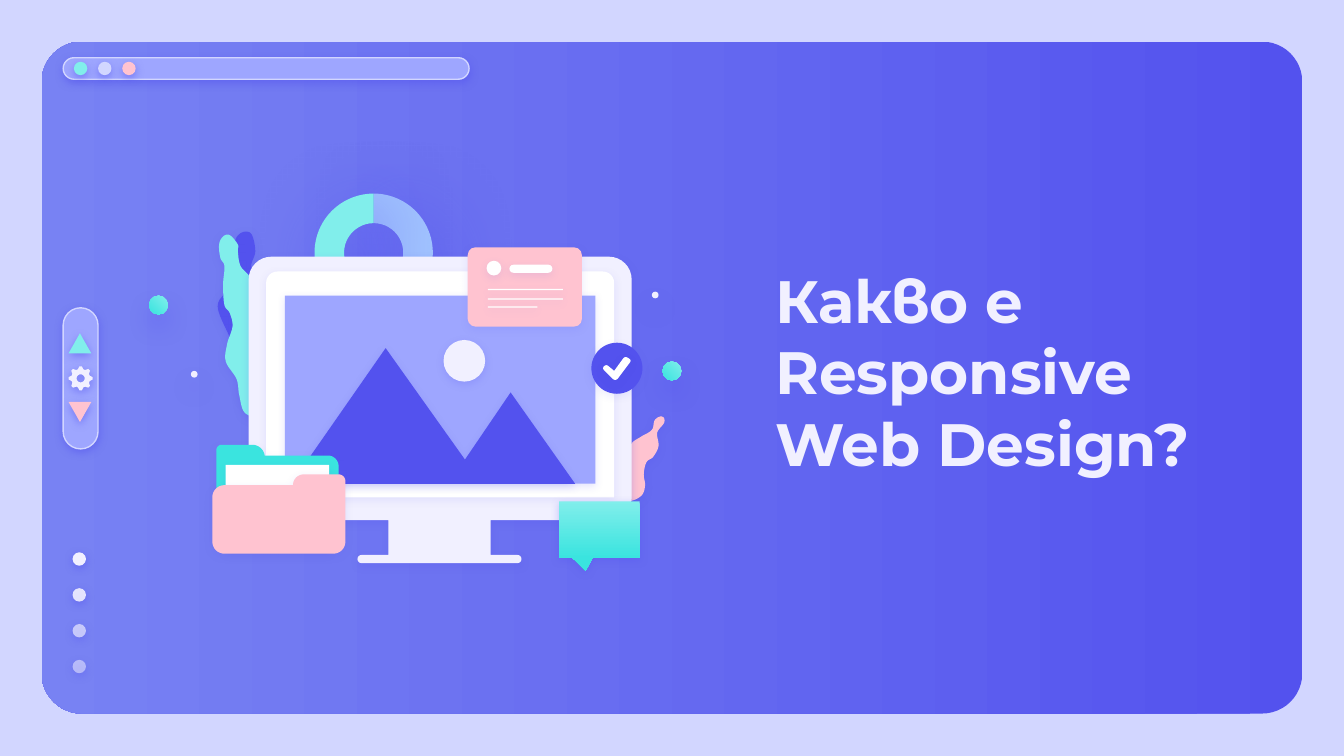
from dataclasses import dataclass
from math import cos, hypot, pi, sin

from lxml.etree import SubElement
from pptx import Presentation
from pptx.dml.color import RGBColor
from pptx.enum.lang import MSO_LANGUAGE_ID
from pptx.enum.shapes import MSO_SHAPE
from pptx.enum.text import MSO_ANCHOR
from pptx.oxml.ns import qn
from pptx.util import Inches, Pt


@dataclass(frozen=True)
class Theme:
    page: str = "D2D6FF"
    indigo: str = "5352EE"
    lilac: str = "9EA6FF"
    sky: str = "A1C3FF"
    mint: str = "81EEEB"
    teal: str = "3AE4DF"
    pink: str = "FFC3D0"
    pale: str = "F1F0FF"
    white: str = "FFFFFF"
    panel: tuple = ("5352EE", "7882F3", 180)
    bubble: tuple = ("81EEEB", "3AE4DF", 270)
    dot: tuple = ("81EEEB", "3AE4DF", 225)
    font: str = "Montserrat"
    title_size: int = 32


@dataclass(frozen=True)
class Box:
    left: float
    top: float
    width: float
    height: float


THEME = Theme()
# Shadows: opacity %, blur pt, distance pt, direction in degrees
SOFT = (50, 4.5, 1.5, 90)
FLOATING = (38, 12.4, 6.8, 90)
WIDE = (67, 38.2, 9, 49)


def faint(opacity):
    return (opacity, *SOFT[1:])


def style(shape, fill, shadow=None, line=None, opacity=100):
    if isinstance(fill, tuple):
        shape.fill.gradient()
        shape.fill.gradient_angle = fill[2]
        for stop, colour in zip(shape.fill.gradient_stops, fill):
            stop.color.rgb = RGBColor.from_string(colour)
    else:
        shape.fill.solid()
        shape.fill.fore_color.rgb = RGBColor.from_string(fill)
    if opacity < 100:
        colour = shape.element.spPr.find(qn("a:solidFill"))[0]
        SubElement(colour, qn("a:alpha"), val=str(opacity * 1000))
    if line:
        shape.line.color.rgb = RGBColor.from_string(line)
        shape.line.width = Pt(0.75)
    else:
        shape.line.fill.background()
    shape.shadow.inherit = False
    if shadow:
        alpha, blur, distance, direction = shadow
        effects = shape.element.spPr.find(qn("a:effectLst"))
        outer = SubElement(effects, qn("a:outerShdw"), blurRad=str(Pt(blur)), dist=str(Pt(distance)),
                           dir=str(direction * 60000), algn="bl", rotWithShape="0")
        colour = SubElement(outer, qn("a:srgbClr"), val=THEME.indigo)
        SubElement(colour, qn("a:alpha"), val=str(alpha * 1000))


def add_preset(slide, box, kind, at, fill, shadow=None, adjust=(), rotation=0, **look):
    """Place a preset shape; at is relative to the box."""
    x, y, width, height = at
    shape = slide.shapes.add_shape(kind, Inches(box.left + x), Inches(box.top + y), Inches(width), Inches(height))
    for index, value in enumerate(adjust):
        shape.adjustments[index] = value
    shape.rotation = rotation
    style(shape, fill, shadow, **look)


def add_circle(slide, box, x, y, size, fill, shadow=SOFT, **look):
    add_preset(slide, box, MSO_SHAPE.OVAL, (x, y, size, size), fill, shadow, **look)


def add_outline(slide, box, contours, fill, shadow):
    """Draw closed contours, given relative to the box, as one freeform."""
    builder = None
    for contour in contours:
        first, *rest = [(Inches(box.left + x), Inches(box.top + y)) for x, y in contour]
        if builder is None:
            builder = slide.shapes.build_freeform(*first)
        else:
            builder.move_to(*first)
        builder.add_line_segments(rest, close=True)
    style(builder.convert_to_shape(), fill, shadow)


def rounded(corners, steps=8):
    """Turn (x, y, radius) corners into a polygon with rounded corners."""
    points = []
    for i, (x, y, radius) in enumerate(corners):
        arms = []
        for nx, ny, _ in (corners[i - 1], corners[(i + 1) % len(corners)]):
            length = hypot(nx - x, ny - y)
            arms.append(((nx - x) / length * radius, (ny - y) / length * radius))
        (ux, uy), (vx, vy) = arms
        for step in range(steps + 1 if radius else 1):
            u, v = 1 - sin(step / steps * pi / 2), 1 - cos(step / steps * pi / 2)
            points.append((x + ux * u + vx * v, y + uy * u + vy * v))
    return points


def smooth_loop(knots, steps=6):
    """Closed Catmull-Rom curve through the knots."""
    def blend(a, b, c, d, t):
        return b + t / 2 * (c - a + t * (2 * a - 5 * b + 4 * c - d + t * (3 * (b - c) + d - a)))
    points = []
    for i in range(len(knots)):
        near = [knots[(i + k) % len(knots)] for k in (-1, 0, 1, 2)]
        points += [tuple(blend(*axis, step / steps) for axis in zip(*near)) for step in range(steps)]
    return points


def ring(cx, cy, radii, count):
    """Points around a centre, cycling through the radii."""
    return [(cx + radii[i % len(radii)] * cos(2 * pi * (i - 0.5) / count),
             cy + radii[i % len(radii)] * sin(2 * pi * (i - 0.5) / count)) for i in range(count)]


def add_browser_bar(slide, box):
    add_preset(slide, box, MSO_SHAPE.ROUNDED_RECTANGLE, (0, 0, box.width, box.height),
               THEME.lilac, SOFT, (0.5,), line=THEME.page)
    for i, colour in enumerate((THEME.mint, THEME.page, THEME.pink)):
        add_circle(slide, box, 0.08 + 0.18 * i, 0.03, 0.1, colour)


def add_control_panel(slide, box):
    add_preset(slide, box, MSO_SHAPE.ROUNDED_RECTANGLE, (0, 0, box.width, box.height),
               THEME.lilac, SOFT, (0.5,), line=THEME.page)
    for y, colour, rotation in ((0.19, THEME.mint, 0), (0.7, THEME.pink, 180)):
        add_preset(slide, box, MSO_SHAPE.ISOSCELES_TRIANGLE, (0.04, y, 0.17, 0.15), colour, SOFT, rotation=rotation)
    # Gear: eight teeth around a round hole
    centre = (box.width / 2, box.height / 2)
    teeth = ring(*centre, (0.09, 0.09, 0.07, 0.07), 32)
    add_outline(slide, box, [teeth, ring(*centre, (0.03,), 32)], THEME.pale, SOFT)


def add_page_dots(slide, box):
    for i, opacity in enumerate((100, 90, 67, 54)):
        add_circle(slide, box, 0, (box.height - box.width) / 3 * i, box.width, THEME.pale, opacity=opacity)


def add_title(slide, box):
    frame = slide.shapes.add_textbox(*(Inches(v) for v in (box.left, box.top, box.width, box.height))).text_frame
    layout = {"word_wrap": True, "vertical_anchor": MSO_ANCHOR.MIDDLE}
    layout |= {f"margin_{side}": Inches(0.1) for side in ("left", "top", "right", "bottom")}
    for name, value in layout.items():
        setattr(frame, name, value)
    title = frame.paragraphs[0].add_run()
    title.text = "Какво е Responsive Web Design?"
    lettering = {"name": THEME.font, "size": Pt(THEME.title_size), "bold": True,
                 "language_id": MSO_LANGUAGE_ID.BULGARIAN}
    for name, value in lettering.items():
        setattr(title.font, name, value)
    title.font.color.rgb = RGBColor.from_string(THEME.pale)


def add_illustration(slide, box):
    # Ring chart behind the monitor
    for rotation, colour in ((90, THEME.sky), (270, THEME.mint)):
        add_preset(slide, box, MSO_SHAPE.BLOCK_ARC, (1.34, 0.44, 0.88, 0.88), colour, WIDE, (108, 0, 0.25), rotation)
    # Leaves
    pink_leaf = [(3.91, 2.1), (3.94, 2.11), (3.94, 2.15), (3.89, 2.22), (3.9, 2.32), (3.86, 2.4), (3.81, 2.44),
                 (3.79, 2.53), (3.8, 2.61), (3.78, 2.68), (3.72, 2.72), (3.66, 2.72), (3.55, 2.63), (3.61, 2.44),
                 (3.66, 2.4), (3.7, 2.3), (3.77, 2.25), (3.85, 2.2), (3.87, 2.13)]
    indigo_leaf = [(0.8, 0.73), (0.87, 0.74), (0.9, 0.87), (0.87, 0.99), (0.94, 1.12), (0.98, 1.17), (1.01, 1.31),
                   (0.97, 1.39), (1.02, 1.53), (1.09, 1.65), (1.05, 1.79), (1.01, 1.92), (0.98, 2.03), (0.91, 2.03),
                   (0.79, 1.94), (0.79, 1.7), (0.71, 1.51), (0.62, 1.28), (0.7, 1.15), (0.77, 1), (0.76, 0.9),
                   (0.75, 0.79)]
    mint_leaf = [(0.71, 0.75), (0.77, 0.82), (0.77, 0.87), (0.79, 0.98), (0.87, 1.08), (0.91, 1.27), (0.96, 1.45),
                 (1.04, 1.63), (1.01, 1.71), (0.98, 1.85), (1.02, 2.02), (0.99, 2.09), (0.93, 2.11), (0.82, 2.07),
                 (0.78, 1.94), (0.76, 1.82), (0.68, 1.69), (0.69, 1.56), (0.73, 1.43), (0.71, 1.33), (0.67, 1.27),
                 (0.66, 1.12), (0.67, 0.98), (0.64, 0.92), (0.63, 0.82), (0.66, 0.76)]
    for knots, colour, opacity in ((pink_leaf, THEME.pink, 22), (indigo_leaf, THEME.indigo, 18),
                                   (mint_leaf, THEME.mint, 18)):
        add_outline(slide, box, [smooth_loop(knots)], colour, faint(opacity))
    # Floating dots
    for x, y, size, fill in ((0.11, 1.2, 0.14, THEME.dot), (0.42, 1.76, 0.05, THEME.pale),
                             (3.93, 1.69, 0.14, THEME.dot), (3.85, 1.17, 0.05, THEME.pale)):
        add_circle(slide, box, x, y, size, fill, FLOATING)
    # Monitor with its stand, page and image area
    monitor = [(0.85, 0.91, 0.17), (3.7, 0.91, 0.17), (3.7, 2.87, 0.17), (2.65, 2.87, 0), (2.65, 3.13, 0),
               (2.88, 3.13, 0.03), (2.88, 3.19, 0.03), (1.66, 3.19, 0.03), (1.66, 3.13, 0.03), (1.89, 3.13, 0),
               (1.89, 2.87, 0), (0.85, 2.87, 0.17)]
    add_outline(slide, box, [rounded(monitor)], THEME.pale, faint(22))
    add_preset(slide, box, MSO_SHAPE.ROUND_2_SAME_RECTANGLE, (0.98, 1.02, 2.59, 1.68), THEME.white, faint(9), (0.05, 0))
    add_preset(slide, box, MSO_SHAPE.RECTANGLE, (1.12, 1.2, 2.31, 1.4), THEME.lilac, faint(14))
    # Profile card
    add_preset(slide, box, MSO_SHAPE.ROUNDED_RECTANGLE, (2.48, 0.84, 0.85, 0.59), THEME.pink, faint(11), (0.1,))
    add_circle(slide, box, 2.62, 0.94, 0.11, THEME.white, faint(11))
    add_preset(slide, box, MSO_SHAPE.ROUNDED_RECTANGLE, (2.79, 0.97, 0.32, 0.06), THEME.white, faint(11), (0.5,))
    for y, width in ((1.15, 0.56), (1.22, 0.56), (1.28, 0.37)):
        add_preset(slide, box, MSO_SHAPE.RECTANGLE, (2.63, y, width, 0.01), THEME.white, faint(11))
    # Check badge
    add_circle(slide, box, 3.4, 1.55, 0.38, THEME.indigo, faint(10))
    check = [(3.48, 1.74, 0.02), (3.51, 1.71, 0.02), (3.57, 1.76, 0), (3.65, 1.65, 0.02), (3.7, 1.68, 0.02),
             (3.58, 1.84, 0.03)]
    add_outline(slide, box, [rounded(check)], THEME.white, faint(10))
    # Mountains and sun
    mountains = [(1.87, 1.59), (1.25, 2.48), (1.25, 2.6), (3.28, 2.6), (2.8, 1.92), (2.46, 2.42)]
    add_outline(slide, box, [mountains], THEME.indigo, faint(18))
    add_circle(slide, box, 2.3, 1.53, 0.31, THEME.pale, faint(18))
    # Folder: back, sheet, front
    folder_back = [(0.61, 2.31, 0.04), (0.95, 2.31, 0.07), (0.97, 2.39, 0), (1.52, 2.39, 0.08), (1.52, 3.05, 0.08),
                   (0.61, 3.05, 0.08)]
    folder_front = [(1.18, 2.53, 0.08), (1.57, 2.53, 0.05), (1.57, 3.12, 0.09), (0.58, 3.12, 0.09),
                    (0.58, 2.61, 0.09), (1.18, 2.61, 0)]
    add_outline(slide, box, [rounded(folder_back)], THEME.teal, faint(10))
    add_preset(slide, box, MSO_SHAPE.RECTANGLE, (0.68, 2.46, 0.77, 0.64), THEME.white, faint(10))
    add_outline(slide, box, [rounded(folder_front)], THEME.pink, faint(10))
    # Speech bubble
    add_preset(slide, box, MSO_SHAPE.ROUNDED_RECTANGULAR_CALLOUT, (3.16, 2.73, 0.6, 0.42), THEME.bubble, faint(31),
               (-0.17, 0.73, 0))


def main():
    deck = Presentation()
    # Widescreen, 16:9
    deck.slide_width, deck.slide_height = Inches(10), Inches(10 * 9 / 16)
    slide = deck.slides.add_slide(deck.slide_layouts[6])
    slide.background.fill.solid()
    slide.background.fill.fore_color.rgb = RGBColor.from_string(THEME.page)
    panel = Box(0.31, 0.31, 9.38, 5)
    add_preset(slide, panel, MSO_SHAPE.ROUNDED_RECTANGLE, (0, 0, panel.width, panel.height), THEME.panel, adjust=(0.06,))
    add_browser_bar(slide, Box(0.47, 0.43, 3.02, 0.16))
    add_page_dots(slide, Box(0.54, 4.11, 0.1, 0.9))
    add_title(slide, Box(5.67, 2.14, 3.64, 1.24))
    add_control_panel(slide, Box(0.47, 2.29, 0.26, 1.05))
    add_illustration(slide, Box(1, 1, 4.2, 3.3))
    deck.save("out.pptx")


if __name__ == "__main__":
    main()
